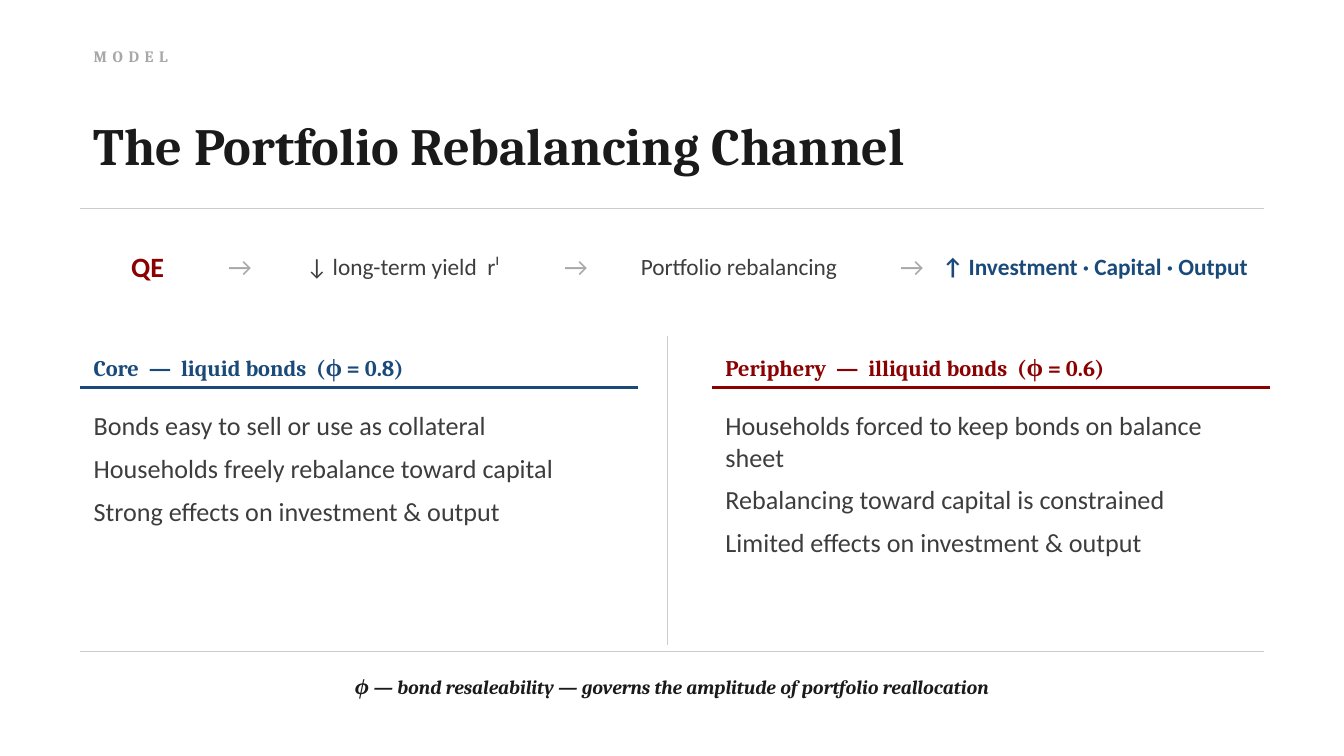
from dataclasses import dataclass

from lxml.etree import SubElement
from pptx import Presentation
from pptx.dml.color import RGBColor
from pptx.enum.shapes import MSO_CONNECTOR as Connector
from pptx.enum.text import MSO_ANCHOR as Anchor
from pptx.enum.text import MSO_AUTO_SIZE as AutoSize
from pptx.enum.text import PP_ALIGN as Align
from pptx.oxml.ns import qn
from pptx.shapes.base import BaseShape
from pptx.slide import Slide
from pptx.util import Cm, Pt

INK, BODY, MUTED, RULE = "1A1A1A", "3D3D3D", "A8A8A8", "CCCCCC"
BLUE, RED = "1A4A7A", "8B0000"
SERIF, SANS = "Cambria", "Calibri"
LEFT, RIGHT = 1.52, 23.88
CONTENT_WIDTH = RIGHT - LEFT


@dataclass(frozen=True)
class Box:
    left: float
    top: float
    width: float
    height: float


@dataclass(frozen=True)
class Style:
    size: float
    color: str
    name: str = SANS
    bold: bool = False
    italic: bool = False
    align: Align = Align.LEFT
    anchor: Anchor = Anchor.MIDDLE
    space_after: float = 0
    tracking: float = 0


@dataclass(frozen=True)
class Step:
    text: str
    width: float
    style: Style


@dataclass(frozen=True)
class Column:
    left: float
    heading: str
    color: str
    points: tuple[str, ...]


ARROW = Step("→", 0.76, Style(14, MUTED, align=Align.CENTER))
STEP_STYLE = Style(12.5, BODY, align=Align.CENTER)
STEPS = (
    Step("QE", 2.54, Style(15, RED, bold=True, align=Align.CENTER)),
    ARROW,
    Step("↓ long-term yield  rˡ", 5.59, STEP_STYLE),
    ARROW,
    Step("Portfolio rebalancing", 5.59, STEP_STYLE),
    ARROW,
    Step("↑ Investment · Capital · Output", 6.35,
         Style(12.5, BLUE, bold=True, align=Align.CENTER)),
)
COLUMNS = (
    Column(LEFT, "Core  —  liquid bonds  (ϕ = 0.8)", BLUE, (
        "Bonds easy to sell or use as collateral",
        "Households freely rebalance toward capital",
        "Strong effects on investment & output",
    )),
    Column(13.46, "Periphery  —  illiquid bonds  (ϕ = 0.6)", RED, (
        "Households forced to keep bonds on balance sheet",
        "Rebalancing toward capital is constrained",
        "Limited effects on investment & output",
    )),
)


def rgb(color: str) -> RGBColor:
    return RGBColor.from_string(color)


def apply(target: object, values: dict[str, object]) -> None:
    for key, value in values.items():
        setattr(target, key, value)


def write(shape: BaseShape, box: Box, lines: tuple[str, ...], style: Style) -> None:
    apply(shape, {
        "left": Cm(box.left), "top": Cm(box.top),
        "width": Cm(box.width), "height": Cm(box.height),
    })
    frame = shape.text_frame
    frame.text = "\n".join(lines)
    apply(frame, {
        "word_wrap": True, "auto_size": AutoSize.NONE, "vertical_anchor": style.anchor,
    })
    for paragraph in frame.paragraphs:
        apply(paragraph, {
            "alignment": style.align, "space_after": Pt(style.space_after),
        })
        for run in paragraph.runs:
            apply(run.font, {
                "name": style.name, "size": Pt(style.size),
                "bold": style.bold, "italic": style.italic,
            })
            run.font.color.rgb = rgb(style.color)
            if style.tracking:
                run._r.get_or_add_rPr().set("spc", str(round(style.tracking * 100)))


def add_text(slide: Slide, box: Box, lines: tuple[str, ...], style: Style) -> None:
    write(slide.shapes.add_textbox(0, 0, 0, 0), box, lines, style)


def add_line(slide: Slide, start: tuple[float, float], end: tuple[float, float],
             color: str = RULE, width: float = 0.75) -> None:
    line = slide.shapes.add_connector(
        Connector.STRAIGHT, *(Cm(value) for value in start + end))
    line.line.color.rgb = rgb(color)
    line.line.width = Pt(width)
    SubElement(line._element.spPr, qn("a:effectLst"))


def add_flow(slide: Slide, steps: tuple[Step, ...]) -> None:
    left = LEFT
    for step in steps:
        add_text(slide, Box(left, 4.37, step.width, 1.32), (step.text,), step.style)
        left += step.width


def add_column(slide: Slide, column: Column) -> None:
    left, width, rule_top = column.left, 10.54, 7.32
    add_text(slide, Box(left, 6.35, width, 0.97), (column.heading,),
             Style(12, column.color, SERIF, bold=True, anchor=Anchor.BOTTOM))
    add_line(slide, (left, rule_top), (left + width, rule_top), column.color, 1.5)
    add_text(slide, Box(left, 7.62, width, 4.45), column.points,
             Style(14, BODY, anchor=Anchor.TOP, space_after=6))


def main() -> None:
    presentation = Presentation()
    apply(presentation, {"slide_width": Cm(25.4), "slide_height": Cm(14.29)})
    slide = presentation.slides.add_slide(presentation.slide_layouts[5])

    add_text(slide, Box(LEFT, 0.71, 22.86, 0.71), ("MODEL",),
             Style(8.5, MUTED, SERIF, bold=True, tracking=3))
    write(slide.shapes.title, Box(LEFT, 1.65, CONTENT_WIDTH, 2.16),
          ("The Portfolio Rebalancing Channel",), Style(28, INK, SERIF, bold=True))
    for top in (3.94, 12.32):
        add_line(slide, (LEFT, top), (RIGHT, top))
    add_flow(slide, STEPS)
    for column in COLUMNS:
        add_column(slide, column)
    add_line(slide, (12.62, 6.35), (12.62, 12.19))
    add_text(slide, Box(LEFT, 12.6, CONTENT_WIDTH, 0.76),
             ("ϕ — bond resaleability — governs the amplitude of portfolio reallocation",),
             Style(10.5, INK, SERIF, bold=True, italic=True, align=Align.CENTER))

    presentation.save("out.pptx")


if __name__ == "__main__":
    main()
